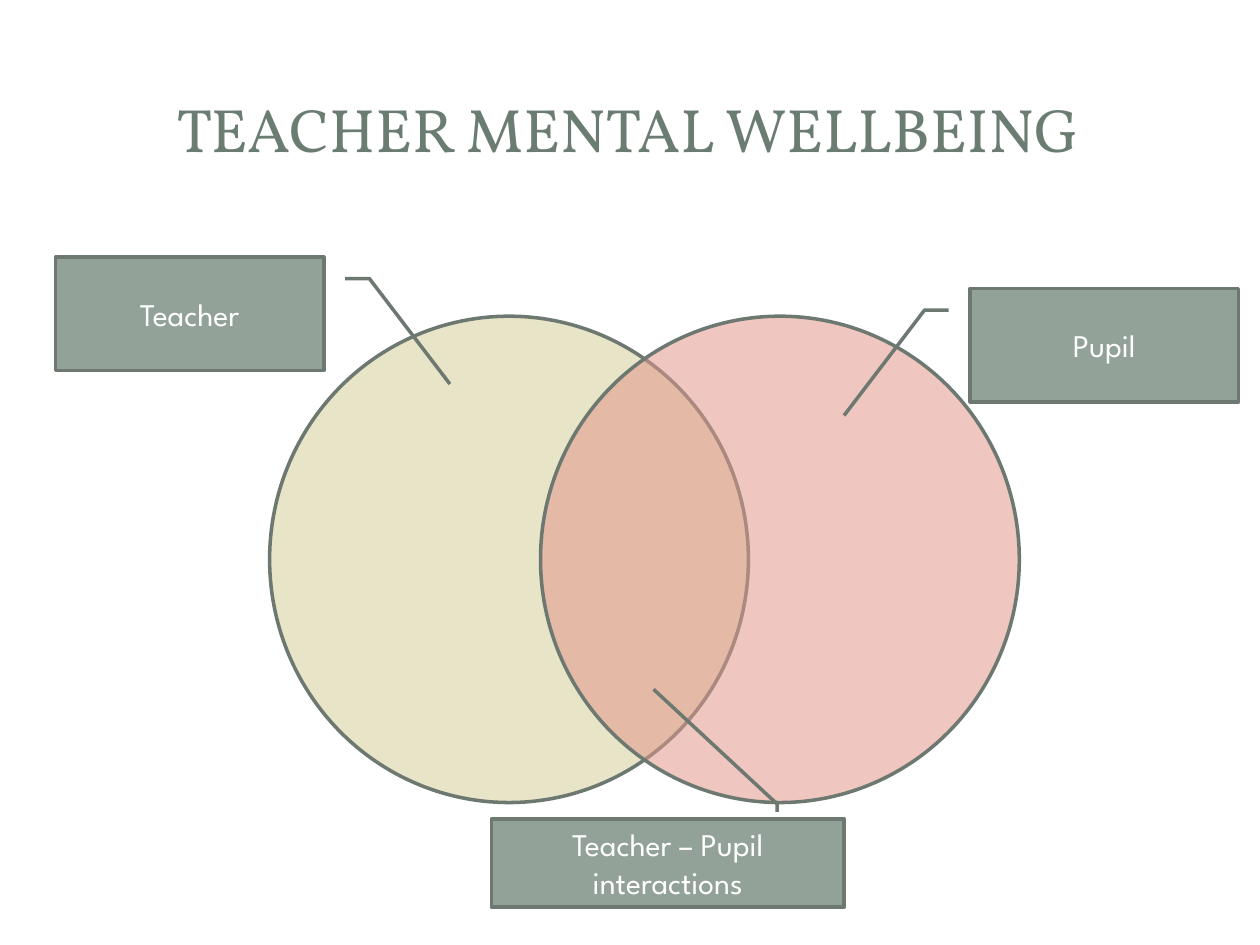
"""Build a Venn diagram slide on teacher mental wellbeing."""
from lxml.etree import SubElement
from pptx import Presentation
from pptx.dml.color import RGBColor as RGB
from pptx.enum.shapes import MSO_SHAPE as SHAPE
from pptx.enum.text import MSO_ANCHOR as ANCHOR, PP_ALIGN as ALIGN
from pptx.oxml.ns import qn
from pptx.util import Inches, Pt

COLORS = {
    "title": "6B7D72", "line": "6D7871", "label": "93A299",
    "teacher": "D3CE98", "pupil": "E2988C", "white": "FFFFFF",
}


def add_outlined(kind, x, y, w, h, fill):
    sp = s.shapes.add_shape(kind, Inches(x), Inches(y), Inches(w), Inches(h))
    sp.shadow.inherit = False
    sp.fill.solid()
    sp.fill.fore_color.rgb = RGB.from_string(COLORS[fill])
    sp.line.color.rgb = RGB.from_string(COLORS["line"])
    sp.line.width = Pt(2)
    return sp


def set_text(sp, text, font, size, color):
    tf = sp.text_frame
    tf.word_wrap = True
    tf.vertical_anchor = ANCHOR.MIDDLE
    tf.text = text
    p = tf.paragraphs[0]
    p.alignment = ALIGN.CENTER
    r = p.runs[0]
    r.font.name = font
    r.font.size = Pt(size)
    r.font.color.rgb = RGB.from_string(COLORS[color])


prs = Presentation()
prs.slide_width, prs.slide_height = Inches(10), Inches(7.5)
s = prs.slides.add_slide(prs.slide_layouts[6])

title = s.shapes.add_textbox(Inches(0.47), Inches(0.45), Inches(9.03), Inches(1.14))
set_text(title, "TEACHER MENTAL WELLBEING", "Vollkorn", 35, "title")

for i, name in enumerate(["teacher", "pupil"]):
    sp = add_outlined(SHAPE.OVAL, 2.14 + i * 2.15, 2.51, 3.8, 3.86, name)
    color = sp.fill._xPr.find(qn("a:solidFill"))[0]
    SubElement(color, qn("a:alpha")).set("val", "54000")

callouts = [
    ("Pupil", (7.7, 2.29, 2.13, 0.9), (0.19, -0.08, 0.19, -0.17, 1.12, -0.47)),
    ("Teacher", (0.44, 2.04, 2.13, 0.9), (0.19, 1.08, 0.19, 1.17, 1.12, 1.47)),
    ("Teacher – Pupil interactions", (3.9, 6.5, 2.8, 0.7),
     (-0.08, 0.81, -0.17, 0.81, -1.47, 0.46)),
]
for text, box, leader in callouts:
    sp = add_outlined(SHAPE.LINE_CALLOUT_2, *box, "label")
    for i, value in enumerate(leader):
        sp.adjustments[i] = value
    set_text(sp, text, "League Spartan", 18, "white")

prs.save("out.pptx")
